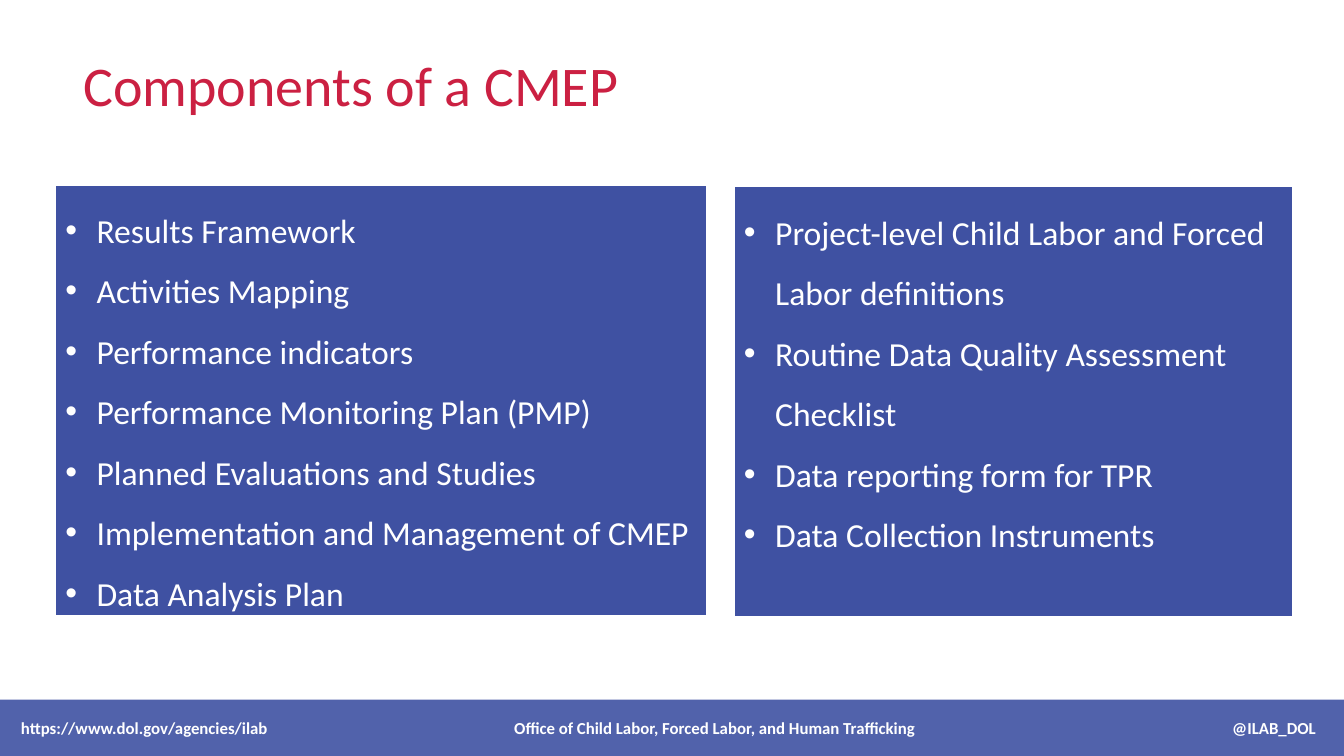
from lxml.etree import SubElement
from pptx import Presentation
from pptx.dml.color import RGBColor
from pptx.enum.shapes import MSO_SHAPE
from pptx.enum.text import MSO_ANCHOR, PP_ALIGN
from pptx.oxml.ns import qn
from pptx.util import Inches, Pt

BLUE = RGBColor(0x3F, 0x51, 0xA2)
RED = RGBColor(0xCB, 0x20, 0x42)
WHITE = RGBColor(0xFF, 0xFF, 0xFF)
FONT = "Calibri"
PAGE_WIDTH, PAGE_HEIGHT = 13.33, 7.5
FOOTER_TOP, FOOTER_HEIGHT = 6.94, 0.56

LEFT_ITEMS = [
    "Results Framework",
    "Activities Mapping",
    "Performance indicators",
    "Performance Monitoring Plan (PMP)",
    "Planned Evaluations and Studies",
    "Implementation and Management of CMEP",
    "Data Analysis Plan",
]
RIGHT_ITEMS = [
    "Project-level Child Labor and Forced Labor definitions",
    "Routine Data Quality Assessment Checklist",
    "Data reporting form for TPR",
    "Data Collection Instruments",
]
# Text, left edge, width, alignment
FOOTER_PARTS = [
    ("https://www.dol.gov/agencies/ilab", 0.11, 4, PP_ALIGN.LEFT),
    ("Office of Child Labor, Forced Labor, and Human Trafficking", 4.59, 5, PP_ALIGN.CENTER),
    ("@ILAB_DOL", 10.15, 3, PP_ALIGN.RIGHT),
]


def add_span(para, text, size, color, bold=False):
    span = para.add_run()
    span.text = text
    span.font.name = FONT
    span.font.size = Pt(size)
    span.font.bold = bold
    span.font.color.rgb = color


def add_rectangle(page, left, top, width, height):
    box = page.shapes.add_shape(
        MSO_SHAPE.RECTANGLE, Inches(left), Inches(top), Inches(width), Inches(height))
    box.shadow.inherit = False
    box.fill.solid()
    box.fill.fore_color.rgb = BLUE
    return box


def add_text(page, left, top, width, height, text, size, color,
             bold=False, align=PP_ALIGN.LEFT, anchor=MSO_ANCHOR.TOP, spacing=1.0):
    box = page.shapes.add_textbox(Inches(left), Inches(top), Inches(width), Inches(height))
    frame = box.text_frame
    frame.word_wrap = True
    frame.vertical_anchor = anchor
    para = frame.paragraphs[0]
    para.alignment = align
    para.line_spacing = spacing
    add_span(para, text, size, color, bold)


def add_bullet(para):
    properties = para._p.get_or_add_pPr()
    properties.set("marL", str(Inches(0.31)))
    properties.set("indent", str(Inches(-0.31)))
    SubElement(properties, qn("a:buFont")).set("typeface", "Arial")
    SubElement(properties, qn("a:buChar")).set("char", "•")


def add_bullet_panel(page, left, top, width, height, items):
    box = add_rectangle(page, left, top, width, height)
    box.line.color.rgb = WHITE
    box.line.width = Pt(1.5)
    frame = box.text_frame
    frame.word_wrap = True
    frame.vertical_anchor = MSO_ANCHOR.TOP
    for index, item in enumerate(items):
        para = frame.add_paragraph() if index else frame.paragraphs[0]
        para.alignment = PP_ALIGN.LEFT
        para.line_spacing = 1.5
        add_bullet(para)
        add_span(para, item, 24, WHITE)


def add_footer(page):
    bar = add_rectangle(page, 0, FOOTER_TOP, PAGE_WIDTH, FOOTER_HEIGHT)
    bar.line.fill.background()
    color = bar.fill._xPr.find(qn("a:solidFill"))[0]
    SubElement(color, qn("a:alpha")).set("val", "90000")
    for text, left, width, align in FOOTER_PARTS:
        add_text(page, left, FOOTER_TOP, width, FOOTER_HEIGHT, text, 12, WHITE,
                 bold=True, align=align, anchor=MSO_ANCHOR.MIDDLE)


def main():
    deck = Presentation()
    deck.slide_width = Inches(PAGE_WIDTH)
    deck.slide_height = Inches(PAGE_HEIGHT)
    page = deck.slides.add_slide(deck.slide_layouts[6])

    # Footer bar and its three labels
    add_footer(page)

    # Title
    add_text(page, 0.73, 0.53, 12.16, 1.05, "Components of a CMEP", 40, RED, spacing=0.9)

    # Two panels of components
    add_bullet_panel(page, 0.55, 1.83, 6.46, 4.28, LEFT_ITEMS)
    add_bullet_panel(page, 7.28, 1.85, 5.55, 4.27, RIGHT_ITEMS)

    deck.save("out.pptx")


if __name__ == "__main__":
    main()
